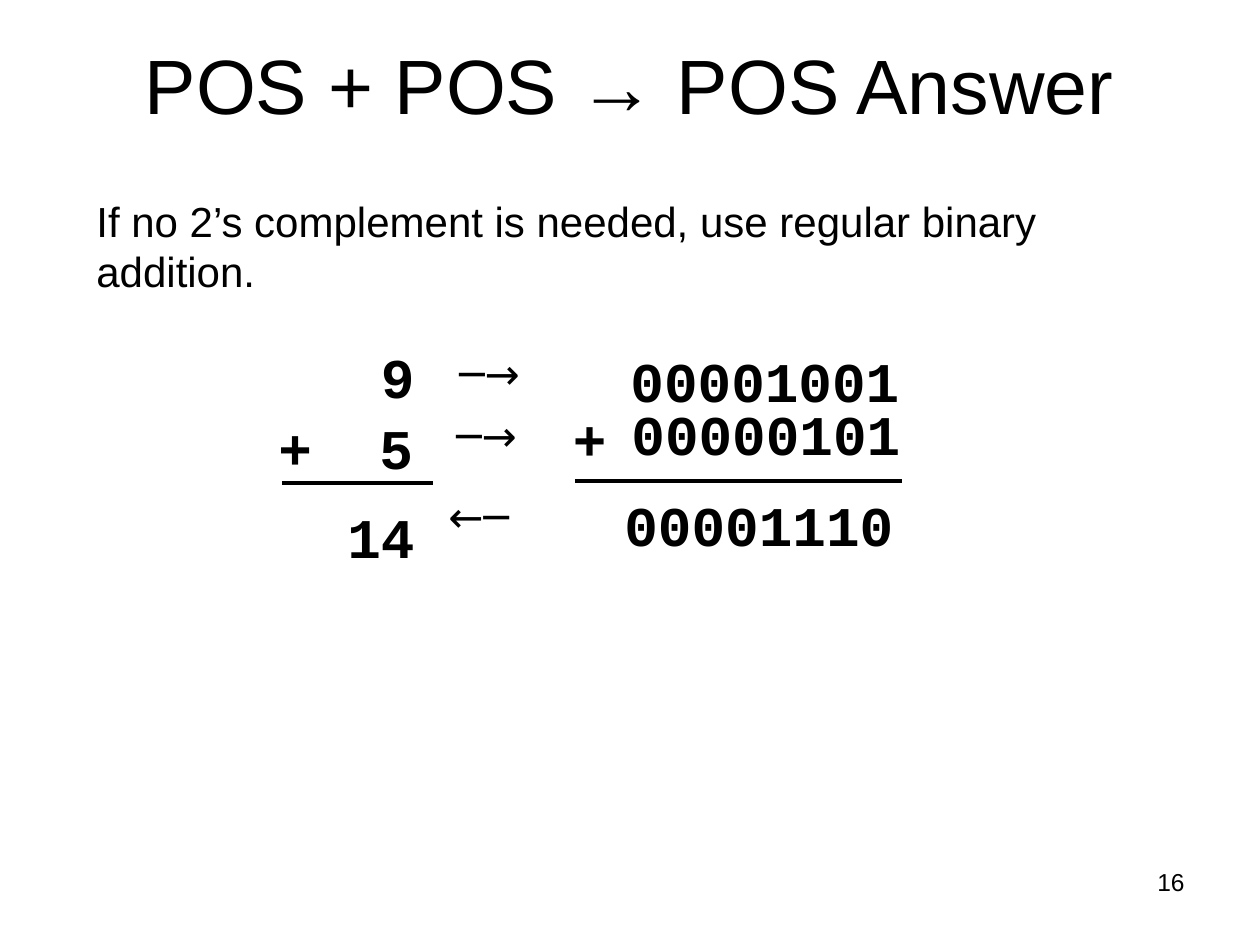
from lxml.etree import SubElement
from pptx import Presentation
from pptx.dml.color import RGBColor
from pptx.enum.shapes import MSO_CONNECTOR
from pptx.enum.text import MSO_ANCHOR, PP_ALIGN
from pptx.oxml.ns import qn
from pptx.util import Emu, Pt

SCALE = 914400 // 126
BLACK = "000000"
SANS, MONO, ARROW = "Arial", "Courier New", "Cabin"
LEFT, CENTER, RIGHT = PP_ALIGN.LEFT, PP_ALIGN.CENTER, PP_ALIGN.RIGHT


def px(n):
    return Emu(n * SCALE)


def color(value):
    return RGBColor.from_string(value)


def add_tab(p, position):
    tabs = SubElement(p._p.get_or_add_pPr(), qn("a:tabLst"))
    SubElement(tabs, qn("a:tab"), pos=str(px(position)), algn="l")


def add_run(p, text, font, size, bold):
    r = p.add_run()
    r.text = text
    r.font.name, r.font.size, r.font.bold = font, Pt(size), bold
    r.font.color.rgb = color(BLACK)


def add_text(slide, box, text, font, size, align=LEFT, bold=False):
    tf = slide.shapes.add_textbox(*map(px, box)).text_frame
    tf.word_wrap = True
    p = tf.paragraphs[0]
    p.alignment = align
    add_run(p, text, font, size, bold)
    return tf


def add_digits(slide, box, text, align=RIGHT):
    return add_text(slide, box, text, MONO, 32, align, bold=True)


def add_decimal_sum(slide):
    tf = add_digits(slide, (266, 336, 161, 233), "9")
    for text, align in (("+\t5", LEFT), ("14", RIGHT)):
        p = tf.add_paragraph()
        p.alignment = align
        p.space_before = Pt(2.5)
        if "\t" in text:
            add_tab(p, 101)
        add_run(p, text, MONO, 32, True)
    p.line_spacing = 1.25


def add_rule(slide, x1, x2, y):
    s = slide.shapes.add_connector(MSO_CONNECTOR.STRAIGHT, px(x1), px(y), px(x2), px(y))
    s.line.color.rgb = color(BLACK)
    s.line.width = Pt(2.25)
    SubElement(s._element.spPr, qn("a:effectLst"))


def main():
    prs = Presentation()
    prs.slide_width, prs.slide_height = px(1260), px(945)
    slide = prs.slides.add_slide(prs.slide_layouts[6])

    # Title, page number and explanation
    title = add_text(slide, (0, 0, 1260, 168), "POS + POS → POS Answer", SANS, 44, CENTER)
    title.vertical_anchor = MSO_ANCHOR.MIDDLE
    add_text(slide, (903, 861, 294, 66), "16", SANS, 14, RIGHT)
    add_text(slide, (84, 189, 1092, 113),
             "If no 2’s complement is needed, use regular binary addition.", SANS, 24)

    # Decimal sum
    add_decimal_sum(slide)
    add_rule(slide, 282, 433, 483)

    # Conversion arrows
    for x, y, arrow in ((447, 341, "─→"), (444, 403, "─→"), (436, 484, "←─")):
        add_text(slide, (x, y, 108, 64), arrow, ARROW, 24)

    # Binary sum
    add_digits(slide, (597, 340, 315, 81), "00001001")
    add_digits(slide, (577, 393, 336, 81), "00000101")
    add_digits(slide, (546, 398, 73, 81), "+")
    add_rule(slide, 575, 902, 481)
    add_digits(slide, (612, 484, 297, 81), "00001110", LEFT)

    prs.save("out.pptx")


if __name__ == "__main__":
    main()
